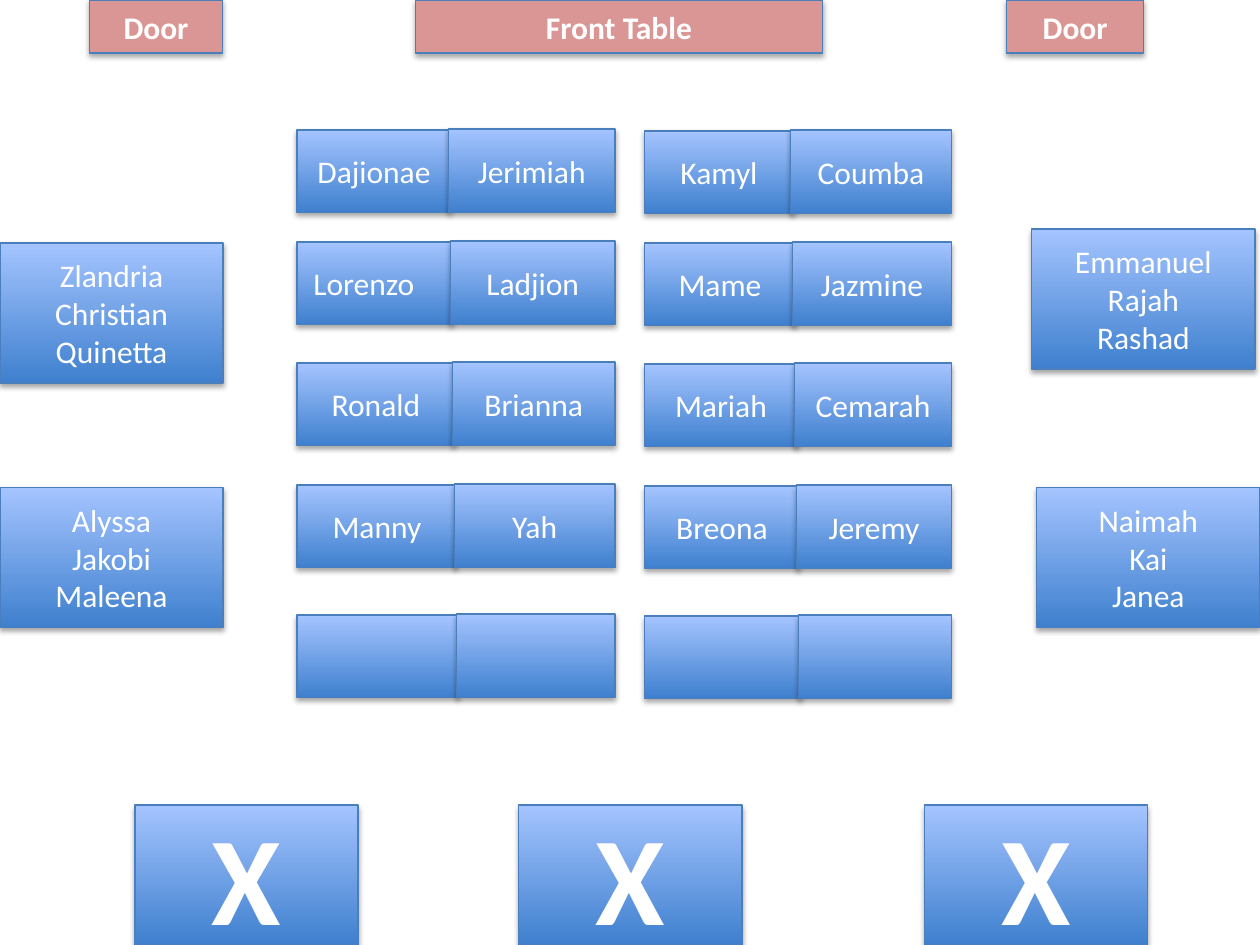
import lxml.etree
import pptx
import pptx.dml.color
import pptx.enum.shapes
import pptx.enum.text
import pptx.oxml.ns
import pptx.util
from pptx.util import Cm

WHITE = pptx.dml.color.RGBColor(0xFF, 0xFF, 0xFF)
PINK = pptx.dml.color.RGBColor(0xD9, 0x96, 0x94)
DEEP_BLUE = pptx.dml.color.RGBColor(0x3F, 0x80, 0xCE)
PALE_BLUE = pptx.dml.color.RGBColor(0xA4, 0xC4, 0xFF)
OUTLINE = pptx.dml.color.RGBColor(0x4B, 0x7E, 0xBC)

# All positions are in centimetres.
FIXTURES = [("Door", 1.8, 2.69), ("Door", 20.29, 2.77), ("Front Table", 8.38, 8.2)]
FIXTURE_HEIGHT = 1.07

TABLE_WIDTH, TABLE_HEIGHT = 4.5, 2.82
SIDE_TABLES = [
    ("Zlandria\nChristian\nQuinetta", 0, 4.9),
    ("Emmanuel\nRajah\nRashad", 20.8, 4.62),
    ("Alyssa\nJakobi\nMaleena", 0, 9.83),
    ("Naimah\nKai\nJanea", 20.9, 9.83),
]
BACK_TABLE_LEFTS = [2.72, 10.46, 18.64]
BACK_TABLE_TOP = 16.23

ROW_TOPS = [2.62, 4.88, 7.32, 9.78, 12.4]
SEAT_HEIGHT = 1.66
SEAT_OVERLAP = 0.05
DIVIDER_STEP = 0.04  # the line between partners drifts right row by row
# left edge, first divider, right edge, downward offset, pairs from front to back
SEAT_BLOCKS = [
    (5.99, 9.04, 12.4, 0, [
        ("Dajionae", "Jerimiah"), ("Lorenzo", "Ladjion"),
        ("Ronald", "Brianna"), ("Manny", "Yah"), ("", "")]),
    (13, 15.94, 19.18, 0.02, [
        ("Kamyl", "Coumba"), ("Mame", "Jazmine"),
        ("Mariah", "Cemarah"), ("Breona", "Jeremy"), ("", "")]),
]


def add_shadow(box):
    box.shadow.inherit = False
    qn = pptx.oxml.ns.qn
    effects = box._element.spPr.find(qn("a:effectLst"))
    shadow = lxml.etree.SubElement(
        effects, qn("a:outerShdw"), blurRad="40000", dist="23000",
        dir="5400000", rotWithShape="0")
    color = lxml.etree.SubElement(shadow, qn("a:srgbClr"), val="000000")
    lxml.etree.SubElement(color, qn("a:alpha"), val="35000")


def fill_blue(box):
    """Fade from deep blue at the bottom to pale blue at the top."""
    box.fill.gradient()
    box.fill.gradient_angle = 90
    for stop, color in zip(box.fill.gradient_stops, (DEEP_BLUE, PALE_BLUE)):
        stop.color.rgb = color


def write_label(box, label, size, bold):
    frame = box.text_frame
    frame.word_wrap = True
    frame.vertical_anchor = pptx.enum.text.MSO_ANCHOR.MIDDLE
    frame.text = label
    for paragraph in frame.paragraphs:
        paragraph.alignment = pptx.enum.text.PP_ALIGN.CENTER
        for run in paragraph.runs:
            run.font.name = "Calibri"
            run.font.size = pptx.util.Pt(size)
            run.font.bold = bold
            run.font.color.rgb = WHITE


def add_box(slide, label, left, top, width, height, size=18, bold=False):
    box = slide.shapes.add_shape(
        pptx.enum.shapes.MSO_SHAPE.RECTANGLE,
        Cm(left), Cm(top), Cm(width), Cm(height))
    fill_blue(box)
    box.line.color.rgb = OUTLINE
    box.line.width = pptx.util.Pt(0.75)
    add_shadow(box)
    if label:
        write_label(box, label, size, bold)
    return box


def add_fixture(slide, label, left, width):
    fixture = add_box(slide, label, left, 0, width, FIXTURE_HEIGHT, bold=True)
    fixture.fill.solid()
    fixture.fill.fore_color.rgb = PINK


def add_seat_block(slide, left, first_divider, right, offset, pairs):
    for row, (top, (left_name, right_name)) in enumerate(zip(ROW_TOPS, pairs)):
        divider = first_divider + row * DIVIDER_STEP
        seat = add_box(slide, left_name, left, top + offset,
                       divider + SEAT_OVERLAP - left, SEAT_HEIGHT)
        if left_name == "Lorenzo":
            seat.text_frame.margin_right = Cm(0.7)
        add_box(slide, right_name, divider, top + offset - 0.02,
                right - divider, SEAT_HEIGHT + 0.02)


def main():
    deck = pptx.Presentation()
    deck.slide_width, deck.slide_height = Cm(25.4), Cm(19.05)
    slide = deck.slides.add_slide(deck.slide_layouts[6])
    for label, left, width in FIXTURES:
        add_fixture(slide, label, left, width)
    for names, left, top in SIDE_TABLES:
        add_box(slide, names, left, top, TABLE_WIDTH, TABLE_HEIGHT)
    for left in BACK_TABLE_LEFTS:
        add_box(slide, "X", left, BACK_TABLE_TOP, TABLE_WIDTH, TABLE_HEIGHT,
                size=72, bold=True)
    for block in SEAT_BLOCKS:
        add_seat_block(slide, *block)
    deck.save("out.pptx")


if __name__ == "__main__":
    main()
